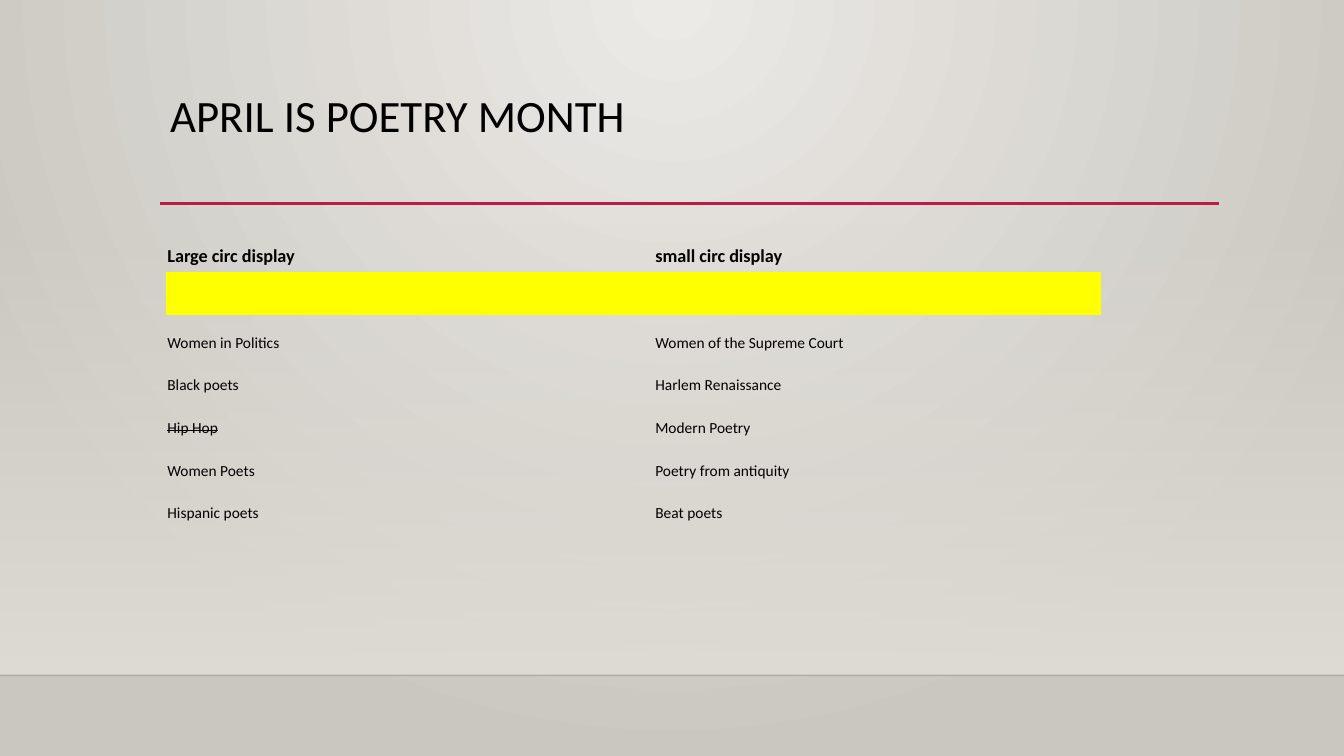
import pptx
import pptx.util
import pptx.oxml
import pptx.oxml.ns
import pptx.dml.color
import pptx.enum.shapes
import pptx.enum.text
from dataclasses import dataclass
from lxml import etree

Inches = pptx.util.Inches
Pt = pptx.util.Pt
qn = pptx.oxml.ns.qn


@dataclass(frozen=True)
class Theme:
    font: str = "Calibri"
    text: str = "000000"
    glow: str = "ECEAE7"
    edge: str = "CAC7C1"
    wall: str = "DFDBD5"
    floor_line: str = "000001"
    accent: str = "B71E42"
    highlight: str = "FFFF00"
    title_size: int = 32
    header_size: int = 13
    body_size: int = 11


THEME = Theme()
NO_STYLE = "{2D5ABB26-0587-4C30-8999-92F81FD0307C}"
DISPLAYS = [
    ("Large circ display", "small circ display"),
    ("", ""),
    ("Women in Politics", "Women of the Supreme Court"),
    ("Black poets", "Harlem Renaissance"),
    ("Hip Hop", "Modern Poetry"),
    ("Women Poets", "Poetry from antiquity"),
    ("Hispanic poets", "Beat poets"),
]
DROPPED = {"Hip Hop"}


def rgb(value):
    return pptx.dml.color.RGBColor.from_string(value)


def set_alpha(element, percent):
    color = next(element.iter(qn("a:srgbClr")))
    etree.SubElement(color, qn("a:alpha")).set("val", str(percent * 1000))


def set_gradient(fill, start, end):
    fill.gradient()
    for stop, value in zip(fill.gradient_stops, (start, end)):
        stop.color.rgb = rgb(value)
    fill.gradient_angle = 270


def set_font(p, size, bold=False):
    p.font.name = THEME.font
    p.font.size = Pt(size)
    p.font.bold = bold
    p.font.color.rgb = rgb(THEME.text)


def add_line(s, left, top, width, color, weight):
    line = s.shapes.add_connector(
        pptx.enum.shapes.MSO_CONNECTOR.STRAIGHT,
        Inches(left), Inches(top), Inches(left + width), Inches(top))
    line.line.color.rgb = rgb(color)
    line.line.width = Pt(weight)
    etree.SubElement(line._element.spPr, qn("a:effectLst"))
    return line


def add_backdrop(s, left, top, width, height):
    set_gradient(s.background.fill, THEME.glow, THEME.edge)
    linear = next(s._element.iter(qn("a:lin")))
    circle = etree.Element(qn("a:path"), path="circle")
    etree.SubElement(circle, qn("a:fillToRect"), l="43000", r="43000", b="100000")
    linear.getparent().replace(linear, circle)

    wall = s.shapes.add_shape(
        pptx.enum.shapes.MSO_SHAPE.RECTANGLE,
        Inches(left), Inches(top), Inches(width), Inches(height))
    wall.shadow.inherit = False
    wall.line.fill.background()
    set_gradient(wall.fill, THEME.wall, THEME.wall)
    set_alpha(wall._element.spPr, 0)

    floor = add_line(s, left, top + height, width, THEME.floor_line, 1)
    set_alpha(floor._element.spPr, 20)


def add_title(s, left, top, width, height):
    add_line(s, left, top + height, width, THEME.accent, 2.5)
    tf = s.shapes.add_textbox(
        Inches(left), Inches(top), Inches(width), Inches(height)).text_frame
    tf.word_wrap = True
    p = tf.paragraphs[0]
    p.text = "APRIL IS POETRY MONTH"
    p.line_spacing = 0.9
    set_font(p, THEME.title_size)


def fill_cell(cell, text, size, bold):
    cell.margin_left = cell.margin_right = cell.margin_top = Inches(0.01)
    cell.margin_bottom = Inches(0.05)
    cell.vertical_anchor = pptx.enum.text.MSO_ANCHOR.BOTTOM
    if text:
        cell.fill.background()
    else:
        cell.fill.solid()
        cell.fill.fore_color.rgb = rgb(THEME.highlight)
    p = cell.text_frame.paragraphs[0]
    set_font(p, size, bold)
    if text:
        r = p.add_run()
        r.text = text
        if text in DROPPED:
            r._r.get_or_add_rPr().set("strike", "sngStrike")


def add_display_table(s, left, top, width, height):
    header_height, first_width = 0.48, 4.84
    frame = s.shapes.add_table(
        len(DISPLAYS), 2, Inches(left), Inches(top), Inches(width), Inches(height))
    table = frame.table
    table.first_row = table.horz_banding = False
    next(table._tbl.iter(qn("a:tableStyleId"))).text = NO_STYLE
    table.columns[0].width = Inches(first_width)
    table.columns[1].width = Inches(width - first_width)
    row_height = (height - header_height) / (len(DISPLAYS) - 1)
    for i, texts in enumerate(DISPLAYS):
        header = i == 0
        table.rows[i].height = Inches(header_height if header else row_height)
        size = THEME.header_size if header else THEME.body_size
        for j, text in enumerate(texts):
            fill_cell(table.cell(i, j), text, size, header)


def main():
    prs = pptx.Presentation()
    prs.slide_width = Inches(13.33)
    prs.slide_height = Inches(7.5)
    s = prs.slides.add_slide(prs.slide_layouts[6])
    add_backdrop(s, 0, 2.21, 13.33, 4.49)
    add_title(s, 1.59, 0.88, 10.5, 1.14)
    add_display_table(s, 1.65, 2.22, 9.27, 3.02)
    prs.save("out.pptx")


if __name__ == "__main__":
    main()
